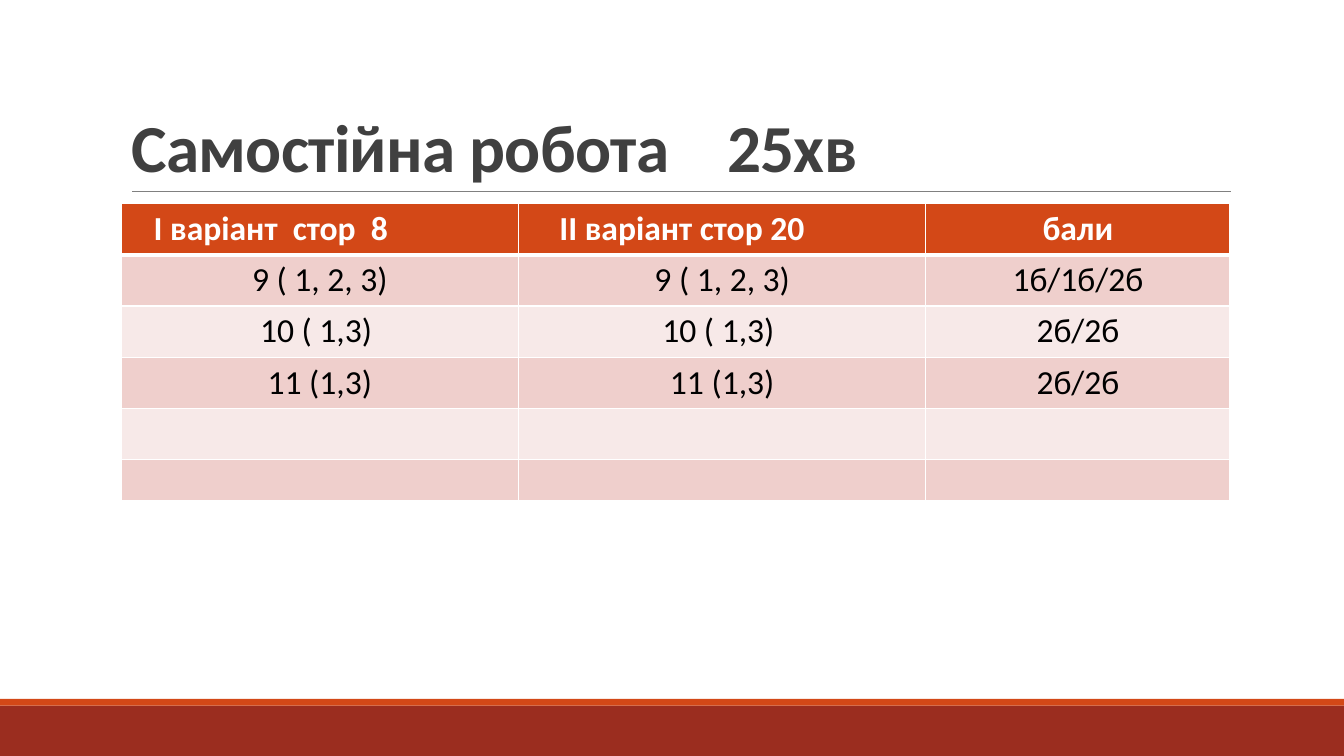
import pptx
import pptx.dml.color
import pptx.enum.shapes
import pptx.enum.text
import pptx.oxml
import pptx.oxml.ns
import pptx.util
from lxml import etree

Pt = pptx.util.Pt
RGB = pptx.dml.color.RGBColor.from_string
ALIGN = pptx.enum.text.PP_ALIGN
ANCHOR = pptx.enum.text.MSO_ANCHOR
qn = pptx.oxml.ns.qn


class Theme:
    font = "Calibri"
    accent, footer, rule = "D34817", "9B2D1F", "808080"
    title, head, body, border = "404040", "FFFFFF", "000000", "FFFFFF"
    bands = ("EFCFCC", "F7E9E8")
    title_size, cell_size, small_size = 48, 24, 18


WIDTH, HEIGHT = 960, 540
HEADERS = ["І варіант  стор  8", "ІІ варіант стор 20", "бали"]
HEADER_INDENTS = [16, 22, 0]
TASKS = [
    ["9 ( 1, 2, 3)", "9 ( 1, 2, 3)", "1б/1б/2б"],
    ["10 ( 1,3) ", "10 ( 1,3) ", "2б/2б"],
    ["11 (1,3)", "11 (1,3)", "2б/2б"],
    ["", "", ""],
    ["", "", ""],
]
COLUMN_WIDTHS = [283.8, 291, 217.2]
ROW_HEIGHTS = [36.5] * 5 + [28.8]


def format_run(r, size, color, bold):
    values = {"name": Theme.font, "size": Pt(size), "bold": bold}
    for name, value in values.items():
        setattr(r.font, name, value)
    r.font.color.rgb = RGB(color)


def add_bar(s, x, y, w, h, color):
    sp = s.shapes.add_shape(pptx.enum.shapes.MSO_SHAPE.RECTANGLE, Pt(x), Pt(y), Pt(w), Pt(h))
    sp.shadow.inherit = False
    sp.fill.solid()
    sp.fill.fore_color.rgb = RGB(color)
    sp.line.fill.background()


def add_footer(s, x, y, w, h):
    strip = 4.8
    add_bar(s, x, y + strip, w, h - strip, Theme.footer)
    add_bar(s, x, y, w, strip, Theme.accent)


def add_title(s, x, y, w, h):
    sp = s.shapes.title
    for name, value in {"left": x, "top": y, "width": w, "height": h}.items():
        setattr(sp, name, Pt(value))
    tf = sp.text_frame
    formats = {"word_wrap": True, "vertical_anchor": ANCHOR.BOTTOM,
               "auto_size": pptx.enum.text.MSO_AUTO_SIZE.NONE}
    for name, value in formats.items():
        setattr(tf, name, value)
    p = tf.paragraphs[0]
    p.alignment, p.line_spacing = ALIGN.LEFT, 0.85
    r = p.add_run()
    r.text = "Самостійна робота\t25хв"
    format_run(r, Theme.title_size, Theme.title, True)
    r.font._element.set("spc", "-50")
    # The tab stop sets the time apart from the heading
    tabs = etree.SubElement(p._p.get_or_add_pPr(), qn("a:tabLst"))
    etree.SubElement(tabs, qn("a:tab"), pos=str(Pt(425.7)), algn="l")
    # Rule along the bottom of the title
    line = s.shapes.add_connector(pptx.enum.shapes.MSO_CONNECTOR.STRAIGHT,
                                  Pt(x + 7.9), Pt(y + h), Pt(x + w + 0.7), Pt(y + h))
    line.line.color.rgb = RGB(Theme.rule)
    line.line.width = Pt(0.5)
    etree.SubElement(line._element.spPr, qn("a:effectLst"))


def add_borders(cell, widths):
    tcPr = cell._tc.get_or_add_tcPr()
    for side, width in widths.items():
        ln = etree.SubElement(tcPr, qn("a:ln" + side), w=str(Pt(width)))
        fill = etree.SubElement(ln, qn("a:solidFill"))
        etree.SubElement(fill, qn("a:srgbClr"), val=Theme.border)


def fill_cell(cell, text, row, col):
    header = row == 0
    add_borders(cell, {"L": 1, "R": 1, "T": 3 if row == 1 else 1, "B": 3 if header else 1})
    cell.fill.solid()
    cell.fill.fore_color.rgb = RGB(Theme.accent if header else Theme.bands[(row - 1) % 2])
    p = cell.text_frame.paragraphs[0]
    indent = HEADER_INDENTS[col] if header else 0
    p.alignment = ALIGN.LEFT if indent else ALIGN.CENTER
    cell.margin_left = Pt(7.2 + indent)
    if text:
        r = p.add_run()
        r.text = text
        format_run(r, Theme.cell_size, Theme.head if header else Theme.body, header)
    else:
        size = Theme.small_size if row == len(TASKS) else Theme.cell_size
        etree.SubElement(p._p, qn("a:endParaRPr"), sz=str(size * 100))


def add_task_table(s, x, y, w, h):
    rows = [HEADERS] + TASKS
    tbl = s.shapes.add_table(len(rows), len(HEADERS), Pt(x), Pt(y), Pt(w), Pt(h)).table
    tbl.horz_banding = False
    for column, width in zip(tbl.columns, COLUMN_WIDTHS):
        column.width = Pt(width)
    for i, (texts, height) in enumerate(zip(rows, ROW_HEIGHTS)):
        tbl.rows[i].height = Pt(height)
        for j, text in enumerate(texts):
            fill_cell(tbl.cell(i, j), text, i, j)


def add_task_slide(prs):
    s = prs.slides.add_slide(prs.slide_layouts[5])
    left, width = 86.6, sum(COLUMN_WIDTHS)
    add_footer(s, 0, 499.2, WIDTH, HEIGHT - 499.2)
    add_title(s, left, 22.6, width, 114.2)
    add_task_table(s, left, 145.6, width, sum(ROW_HEIGHTS))


def main():
    prs = pptx.Presentation()
    prs.slide_width, prs.slide_height = Pt(WIDTH), Pt(HEIGHT)
    add_task_slide(prs)
    prs.save("out.pptx")


if __name__ == "__main__":
    main()
